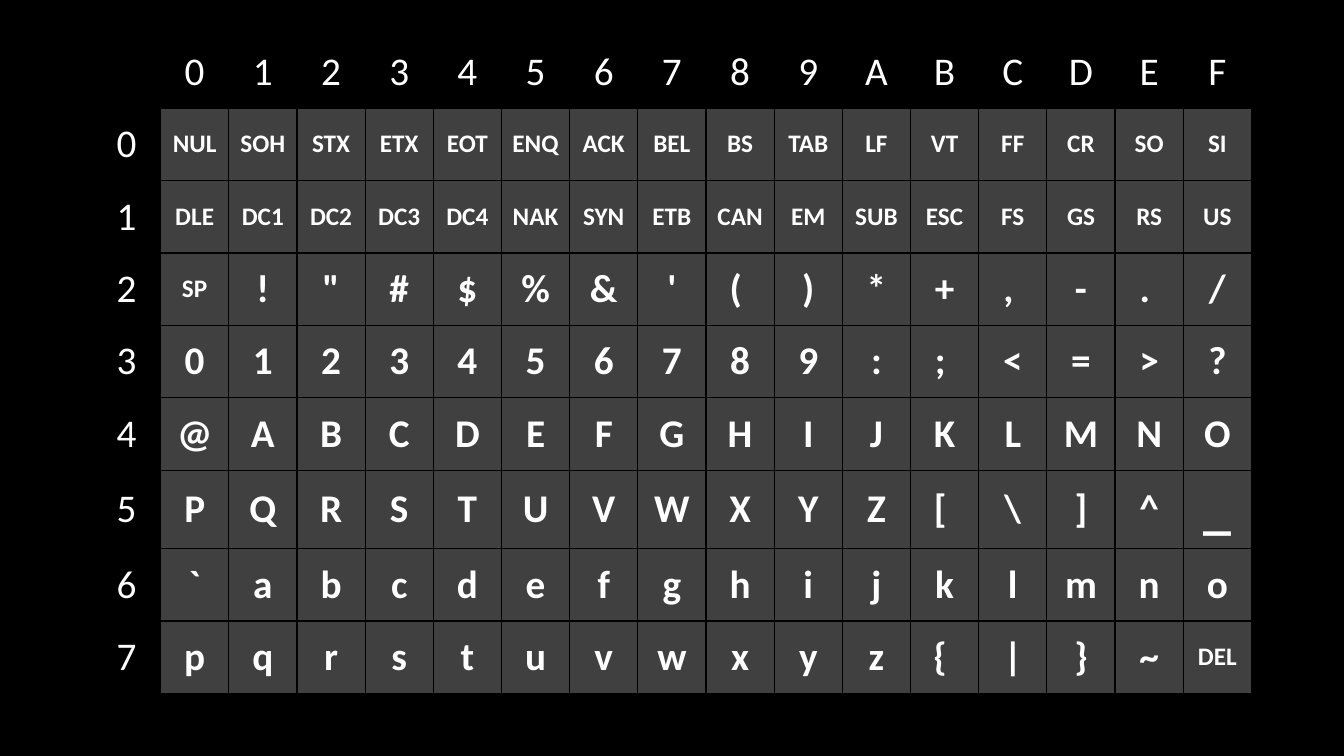
import pptx
import pptx.dml.color
import pptx.enum.text
import pptx.oxml
import pptx.oxml.ns
import pptx.util

HUES = {"back": "000000", "cell": "404040", "text": "FFFFFF"}
HEX = "0123456789ABCDEF"
ROWS = 8

# Names shown for the codes that have no glyph
NAMES = dict(enumerate(
    "NUL SOH STX ETX EOT ENQ ACK BEL BS TAB LF VT FF CR SO SI "
    "DLE DC1 DC2 DC3 DC4 NAK SYN ETB CAN EM SUB ESC FS GS RS US SP".split()))
NAMES[127] = "DEL"
# Marks followed by a space, which nudges them to the left
NUDGED = "(,.;[{"


class Deck:
    font = "Calibri"
    scale = 9525  # EMU per px

    def __init__(self, wide, high):
        self.show = pptx.Presentation()
        self.show.slide_width = self.px(wide)
        self.show.slide_height = self.px(high)
        self.slide = self.show.slides.add_slide(self.show.slide_layouts[6])
        self.paint(self.slide.background.fill, "back")

    def px(self, count):
        return pptx.util.Emu(count * self.scale)

    def hue(self, name):
        return pptx.dml.color.RGBColor.from_string(HUES[name])

    def paint(self, fill, name):
        fill.solid()
        fill.fore_color.rgb = self.hue(name)

    def table(self, rows, cols, left, top, wide, high):
        frame = self.slide.shapes.add_table(
            rows, cols, *map(self.px, (left, top, wide, high)))
        frame.table.first_row = False
        frame.table.horz_banding = False
        return frame.table

    def edge(self, cell, name):
        props = cell._tc.get_or_add_tcPr()
        for side in ("lnL", "lnR", "lnT", "lnB"):
            props.append(pptx.oxml.parse_xml(
                f'<a:{side} {pptx.oxml.ns.nsdecls("a")} w="12700"><a:solidFill>'
                f'<a:srgbClr val="{HUES[name]}"/></a:solidFill></a:{side}>'))

    def cell(self, cell, text, fill, size=28, bold=False):
        self.edge(cell, "back")
        self.paint(cell.fill, fill)
        cell.vertical_anchor = pptx.enum.text.MSO_ANCHOR.MIDDLE
        if not text:
            return
        para = cell.text_frame.paragraphs[0]
        para.alignment = pptx.enum.text.PP_ALIGN.CENTER
        run = para.add_run()
        run.text = text
        run.font.name = self.font
        run.font.size = pptx.util.Pt(size)
        run.font.bold = bold
        run.font.color.rgb = self.hue("text")


def glyph(code):
    """Return the text and point size for one code."""
    if code in NAMES:
        return NAMES[code], 18
    mark = chr(code)
    if mark in NUDGED:
        mark += " "
    return mark, 40 if mark == "_" else 28


def main():
    deck = Deck(1280, 720)
    grid = deck.table(ROWS + 1, len(HEX) + 1, 88, 34, 1104, 621)

    # Column heads, after an empty corner
    for col, head in enumerate(["", *HEX]):
        deck.cell(grid.cell(0, col), head, "back")

    # Row heads and codes
    for row in range(ROWS):
        deck.cell(grid.cell(row + 1, 0), HEX[row], "back")
        for col in range(len(HEX)):
            text, size = glyph(row * len(HEX) + col)
            deck.cell(grid.cell(row + 1, col + 1), text, "cell", size, True)

    deck.show.save("out.pptx")


if __name__ == "__main__":
    main()
